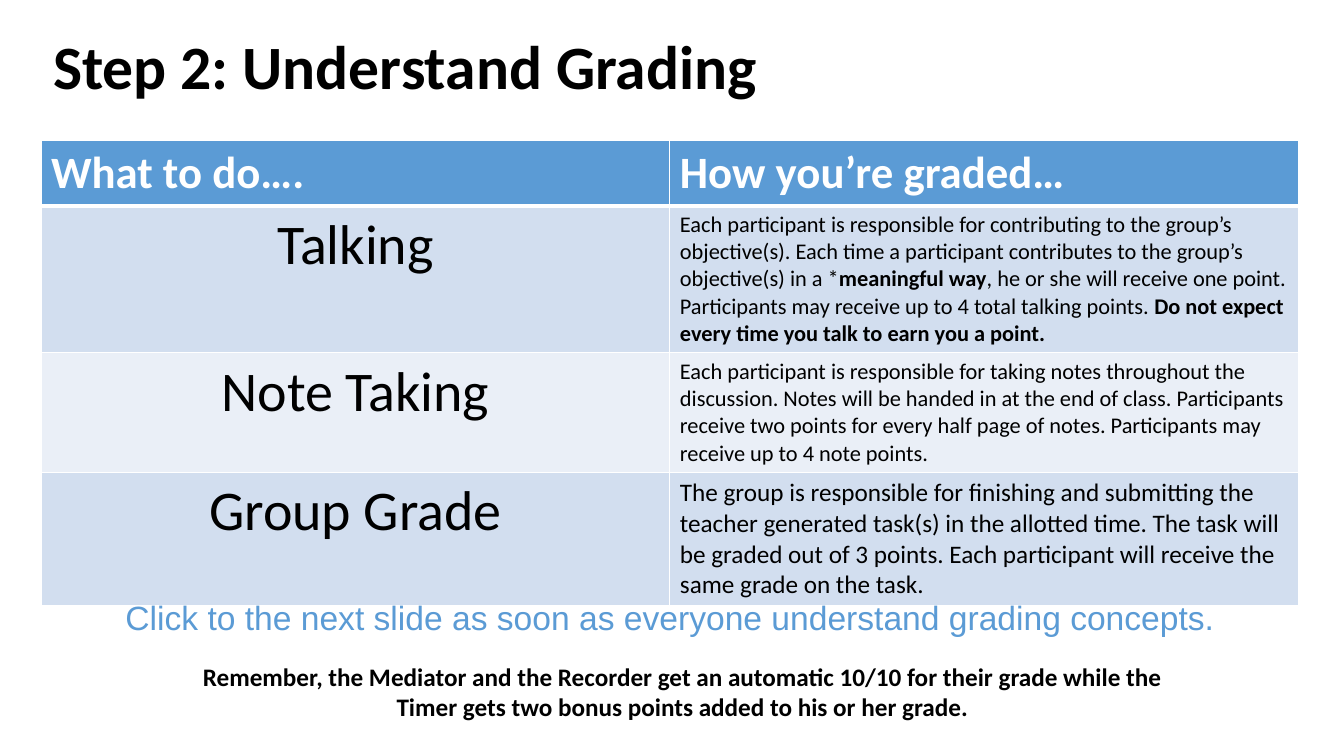
from dataclasses import dataclass

from lxml import etree
from pptx import Presentation
from pptx import util as u
from pptx.dml.color import RGBColor
from pptx.enum import text
from pptx.oxml.ns import qn

PX = 9525
BLACK, WHITE, BLUE = "000000", "FFFFFF", "5B9BD5"
LEFT, CENTER = text.PP_ALIGN.LEFT, text.PP_ALIGN.CENTER


@dataclass
class Style:
    """Character and paragraph look."""
    size: int
    color: str = BLACK
    bold: bool = False
    align: int = LEFT
    font: str = "Calibri"


@dataclass
class Row:
    """One grading row; every second part of the rule is bold."""
    task: str
    rule: list[str]
    size: int
    height: int
    fill: str


@dataclass
class Note:
    """A centred line of text below the table."""
    box: tuple[int, int, int, int]
    words: str
    style: Style


ROWS = [
    Row("Talking",
        ["Each participant is responsible for contributing to the group’s objective(s). "
         "Each time a participant contributes to the group’s objective(s) in a *",
         "meaningful way",
         ", he or she will receive one point. Participants may receive up to 4 total talking points. ",
         "Do not expect every time you talk to earn you a point."], 16, 139, "D2DEEF"),
    Row("Note Taking",
        ["Each participant is responsible for taking notes throughout the discussion. "
         "Notes will be handed in at the end of class. Participants receive two points for "
         "every half page of notes. Participants may receive up to 4 note points."],
        16, 114, "EAEFF7"),
    Row("Group Grade",
        ["The group is responsible for finishing and submitting the teacher generated task(s) "
         "in the allotted time. The task will be graded out of 3 points. Each participant will "
         "receive the same grade on the task."], 18, 127, "D2DEEF"),
]
HEADINGS = ["What to do….", "How you’re graded…"]
HEADER_HEIGHT = 62
NOTES = [
    Note((156, 625, 988, 68),
         "Remember, the Mediator and the Recorder get an automatic 10/10 for their grade "
         "while the Timer gets two bonus points added to his or her grade.",
         Style(18, bold=True, align=CENTER)),
    Note((41, 564, 1194, 78),
         "Click to the next slide as soon as everyone understand grading concepts.",
         Style(24, BLUE, align=CENTER, font="Arial")),
]


def rgb(color: str) -> RGBColor:
    """Turn a hex string into a colour."""
    return RGBColor.from_string(color)


def emu(*lengths: int) -> list[int]:
    """Turn px lengths into EMU."""
    return [n * PX for n in lengths]


def format_run(r, style: Style) -> None:
    """Give a run its font."""
    r.font.name, r.font.size, r.font.bold = style.font, u.Pt(style.size), style.bold
    r.font.color.rgb = rgb(style.color)


def write(tf, words: str, style: Style) -> None:
    """Fill a text frame with one styled paragraph."""
    tf.word_wrap = True
    tf.text = words
    p = tf.paragraphs[0]
    p.alignment = style.align
    format_run(p.runs[0], style)


def write_rule(tf, row: Row) -> None:
    """Write a grading rule with alternating plain and bold runs."""
    p = tf.paragraphs[0]
    for i, part in enumerate(row.rule):
        r = p.add_run()
        r.text = part
        format_run(r, Style(row.size, bold=i % 2 == 1))


def paint_cell(cell, fill: str, top: int = 1, bottom: int = 1) -> None:
    """Give a cell white borders, in points, and a fill."""
    tc_pr = cell._tc.get_or_add_tcPr()
    for side, width in (("L", 1), ("R", 1), ("T", top), ("B", bottom)):
        ln = etree.SubElement(tc_pr, qn(f"a:ln{side}"), w=str(u.Pt(width)))
        solid = etree.SubElement(ln, qn("a:solidFill"))
        etree.SubElement(solid, qn("a:srgbClr"), val=WHITE)
    cell.fill.solid()
    cell.fill.fore_color.rgb = rgb(fill)


def add_title(s) -> None:
    """Place and format the slide title."""
    sp = s.shapes.title
    sp.left, sp.top, sp.width, sp.height = emu(41, 0, 1197, 133)
    tf = sp.text_frame
    write(tf, "Step 2: Understand Grading", Style(44, bold=True))
    tf.vertical_anchor = text.MSO_ANCHOR.MIDDLE
    tf.paragraphs[0].line_spacing = 0.9


def add_grading_table(s) -> None:
    """Draw the grading table."""
    heights = [HEADER_HEIGHT] + [row.height for row in ROWS]
    table = s.shapes.add_table(len(heights), 2, *emu(39, 134, 1198, sum(heights))).table
    for line, height in zip(table.rows, heights):
        line.height = height * PX
    for col, heading in enumerate(HEADINGS):
        cell = table.cell(0, col)
        write(cell.text_frame, heading, Style(32, WHITE, True))
        paint_cell(cell, BLUE, bottom=3)
    for i, row in enumerate(ROWS, 1):
        task, rule = table.cell(i, 0), table.cell(i, 1)
        write(task.text_frame, row.task, Style(40, align=CENTER))
        write_rule(rule.text_frame, row)
        for cell in (task, rule):
            paint_cell(cell, row.fill, top=3 if i == 1 else 1)


def add_note(s, note: Note) -> None:
    """Draw a note below the table."""
    write(s.shapes.add_textbox(*emu(*note.box)).text_frame, note.words, note.style)


def main() -> None:
    """Build and save the slide."""
    prs = Presentation()
    prs.slide_width, prs.slide_height = emu(1280, 720)
    s = prs.slides.add_slide(prs.slide_layouts[5])
    add_title(s)
    add_grading_table(s)
    for note in NOTES:
        add_note(s, note)
    prs.save("out.pptx")


if __name__ == "__main__":
    main()
